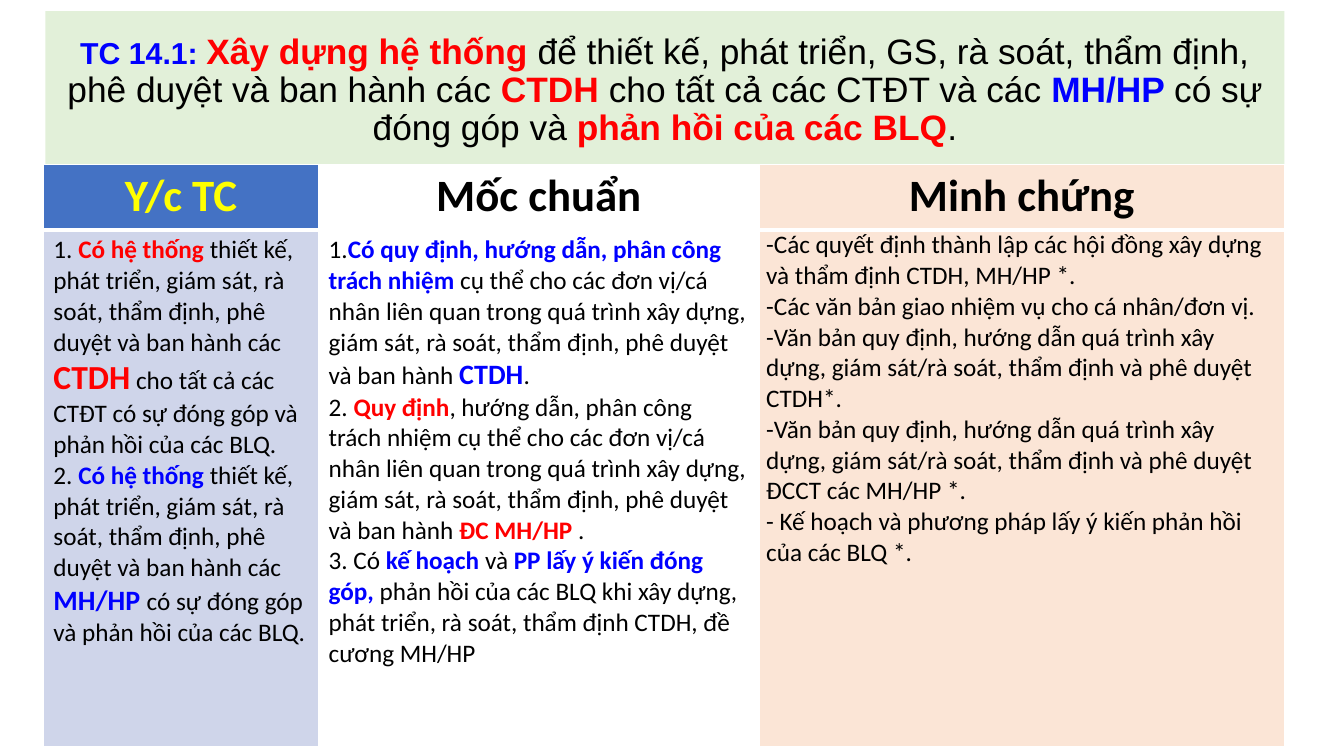
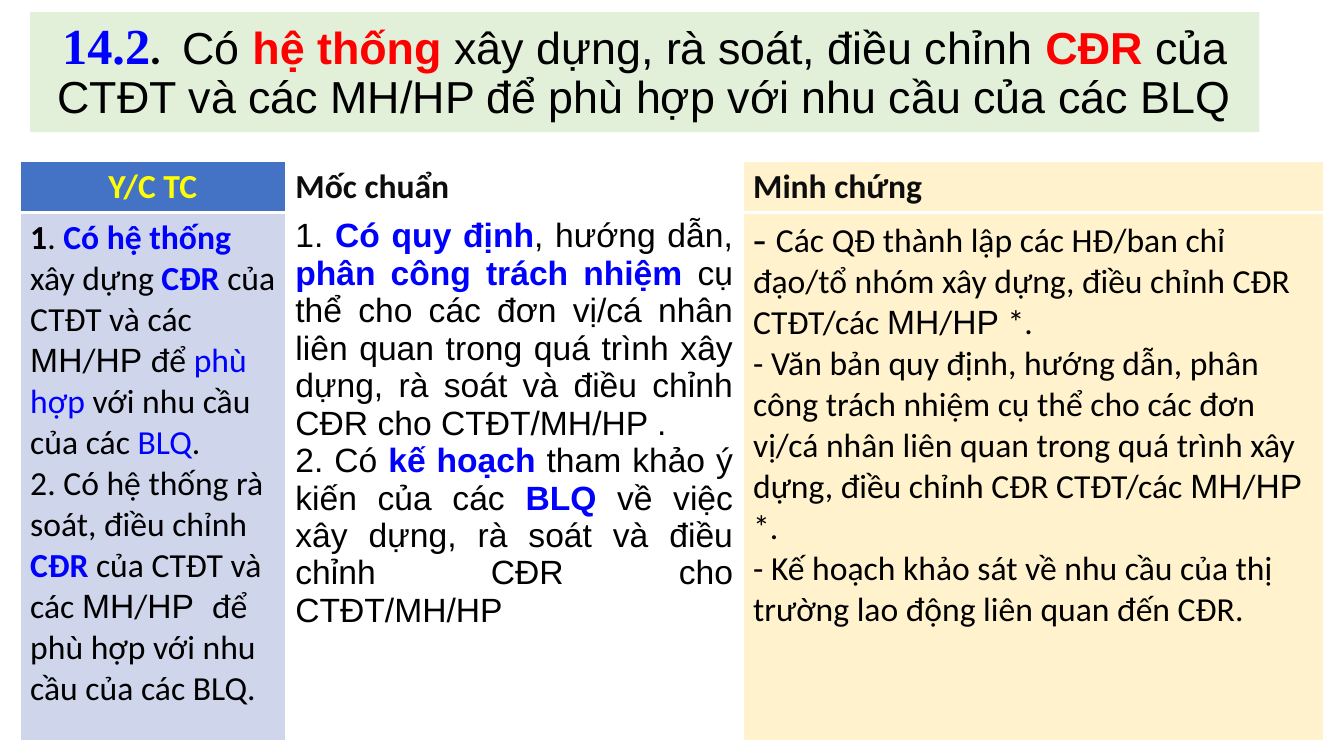
from lxml import etree
from pptx import Presentation
from pptx.dml.color import RGBColor
from pptx.enum.shapes import MSO_SHAPE
from pptx.enum.text import MSO_ANCHOR, PP_ALIGN
from pptx.oxml.ns import qn
from pptx.util import Inches, Pt

# Shared colours
BLACK, WHITE, SOFT_BLACK = "000000", "FFFFFF", "0D0D0D"
RED, BLUE, YELLOW = "FF0000", "0000FF", "FFFF00"
TITLE_GREEN, HEADER_BLUE, BODY_BLUE = "E2F0D9", "4472C4", "CFD5EA"
PEACH, CREAM = "FBE5D6", "FFF2CC"

# Shared text styles; a piece of text is a string or (string, style)
STRONG_RED = {"color": RED, "bold": True}
STRONG_BLUE = {"color": BLUE, "bold": True}
PLAIN_BLUE = {"color": BLUE}
ARIAL = {"font": "Arial"}


def red(text, **style):
    return text, STRONG_RED | style


def blue(text, **style):
    return text, STRONG_BLUE | style


def rgb(color):
    return RGBColor.from_string(color)


def add_pieces(paragraph, pieces, base):
    """Add one run per piece, each styled from base plus its own changes."""
    for piece in pieces:
        text, changes = (piece, {}) if isinstance(piece, str) else piece
        style = {"font": "Calibri", "color": BLACK} | base | changes
        run = paragraph.add_run()
        run.text = text
        run.font.name = style["font"]
        run.font.size = Pt(style["size"])
        run.font.bold = style.get("bold", False)
        run.font.italic = style.get("italic", False)
        run.font.color.rgb = rgb(style["color"])


def fill_text(text_frame, paragraphs, base, align=PP_ALIGN.LEFT):
    for index, pieces in enumerate(paragraphs):
        paragraph = text_frame.paragraphs[0] if index == 0 else text_frame.add_paragraph()
        paragraph.alignment = align
        add_pieces(paragraph, pieces, base)


def add_title(slide, left, top, width, height, pieces, size, bottom_inset=0.05):
    """Add the green title band."""
    shape = slide.shapes.add_shape(
        MSO_SHAPE.RECTANGLE, Inches(left), Inches(top), Inches(width), Inches(height))
    shape.shadow.inherit = False
    shape.fill.solid()
    shape.fill.fore_color.rgb = rgb(TITLE_GREEN)
    shape.line.fill.background()
    text_frame = shape.text_frame
    text_frame.word_wrap = True
    text_frame.vertical_anchor = MSO_ANCHOR.MIDDLE
    text_frame.margin_bottom = Inches(bottom_inset)
    fill_text(text_frame, [pieces], {"font": "Arial", "size": size}, PP_ALIGN.CENTER)
    text_frame.paragraphs[0].line_spacing = 0.9


def style_cell(cell, color, top, bottom):
    """Set the fill and the white borders of a cell."""
    properties = cell._tc.get_or_add_tcPr()
    for side, points in (("L", 1), ("R", 1), ("T", top), ("B", bottom)):
        line = etree.SubElement(properties, qn(f"a:ln{side}"), w=str(Pt(points)))
        solid = etree.SubElement(line, qn("a:solidFill"))
        etree.SubElement(solid, qn("a:srgbClr"), val=WHITE)
    cell.fill.solid()
    cell.fill.fore_color.rgb = rgb(color)


def add_criteria_table(slide, left, top, widths, heights, columns, header_size, body_size):
    """Add a header row and a body row; each column is a dict."""
    table = slide.shapes.add_table(
        2, len(columns), Inches(left), Inches(top),
        Inches(sum(widths)), Inches(sum(heights))).table
    for row, height in zip(table.rows, heights):
        row.height = Inches(height)
    for index, (column, width) in enumerate(zip(columns, widths)):
        table.columns[index].width = Inches(width)
        header, body = table.cell(0, index), table.cell(1, index)
        style_cell(header, column["header_fill"], 1, 3)
        style_cell(body, column["body_fill"], 3, 1)
        fill_text(header.text_frame, [[column["header"]]],
                  {"size": header_size, "bold": True, "color": column["header_color"]},
                  column["header_align"])
        fill_text(body.text_frame, column["body"],
                  {"size": body_size, "font": column.get("font", "Calibri")},
                  column.get("align", PP_ALIGN.LEFT))
        if "insets" in column:
            side, edge = column["insets"]
            body.margin_left = body.margin_right = Inches(side)
            body.margin_top = body.margin_bottom = Inches(edge)


def make_columns(headers, bodies, evidence_fill, header_color, header_align):
    """Build the requirement, benchmark and evidence columns."""
    fills = [(HEADER_BLUE, BODY_BLUE), (WHITE, WHITE), (evidence_fill, evidence_fill)]
    columns = [
        {"header": header, "body": body, "header_fill": header_fill, "body_fill": body_fill,
         "header_color": header_color, "header_align": header_align}
        for header, body, (header_fill, body_fill) in zip(headers, bodies, fills)]
    columns[0].update(header_color=YELLOW, header_align=PP_ALIGN.CENTER)
    return columns


def add_system_slide(slide):
    add_title(slide, 0.45, 0.11, 12.29, 1.68, [
        blue("TC 14.1: ", size=21.6), red("Xây dựng hệ thống "),
        "để thiết kế, phát triển, GS, rà soát, thẩm định, phê duyệt và ban hành các ",
        red("CTDH "), "cho tất cả các CTĐT và các ", blue("MH/HP "),
        "có sự đóng góp và ", red("phản hồi của các BLQ"), "."], 25.2, 0.15)

    design = "thiết kế, phát triển, giám sát, rà soát, thẩm định, phê duyệt và ban hành các "
    units = ("cụ thể cho các đơn vị/cá nhân liên quan trong quá trình xây dựng, "
             "giám sát, rà soát, thẩm định, phê duyệt và ban hành ")
    guidance = ("-Văn bản quy định, hướng dẫn quá trình xây dựng, "
                "giám sát/rà soát, thẩm định và phê duyệt ")
    requirements = [
        ["1. ", red("Có hệ thống "), design, red("CTDH", size=24),
         " cho tất cả các CTĐT có sự đóng góp và phản hồi của các BLQ."],
        ["2. ", blue("Có hệ thống "), design, blue("MH/HP ", size=20),
         "có sự đóng góp và phản hồi của các BLQ."]]
    benchmarks = [
        ["1.", blue("Có quy định, hướng dẫn, phân công trách nhiệm "), units,
         blue("CTDH", size=20), "."],
        ["2. ", red("Quy định"), ", hướng dẫn, phân công trách nhiệm " + units,
         red("ĐC MH/HP "), "."],
        ["3. Có ", blue("kế hoạch "), "và ", blue("PP lấy ý kiến đóng góp,"),
         " phản hồi của các BLQ khi xây dựng, phát triển, rà soát, thẩm định CTDH, "
         "đề cương MH/HP"]]
    evidence = [
        ["-Các quyết định thành lập các hội đồng xây dựng và thẩm định CTDH, MH/HP *."],
        ["-Các văn bản giao nhiệm vụ cho cá nhân/đơn vị."],
        [guidance + "CTDH*."],
        [guidance + "ĐCCT các MH/HP *."],
        ["- Kế hoạch và phương pháp lấy ý kiến phản hồi của các BLQ *."]]
    columns = make_columns(["Y/c TC", "Mốc chuẩn", "Minh chứng"],
                           [requirements, benchmarks, evidence],
                           PEACH, BLACK, PP_ALIGN.CENTER)
    columns[2]["insets"] = (0.07, 0)
    add_criteria_table(slide, 0.43, 1.63, [2.73, 4.37, 5.21], [0.65, 5.13], columns, 32, 18)


def add_outcome_slide(slide):
    add_title(slide, 0.3, 0.12, 12.19, 1.19, [
        blue("14.2", size=36, font="Times New Roman"),
        (".  ", {"font": "Calibri", "bold": True, "italic": True}),
        "Có ", red("hệ thống "), "xây dựng, rà soát, điều chỉnh ", red("CĐR"),
        " của CTĐT và các MH/HP để phù hợp với nhu cầu của các BLQ"], 32)

    course = [("MH", ARIAL), "/", ("HP ", ARIAL)]
    review = "xây dựng, rà soát và điều chỉnh CĐR cho CTĐT/MH/HP"
    units = "cụ thể cho các đơn vị/cá nhân liên quan trong quá trình "
    requirements = [
        [("1", {"bold": True}), ". ", blue("Có hệ thống "), "xây dựng ", blue("CĐR "),
         "của CTĐT và các ", *course, "để ", ("phù hợp ", PLAIN_BLUE),
         "với nhu cầu của các ", ("BLQ", PLAIN_BLUE), "."],
        ["2. Có hệ thống rà soát, điều chỉnh ", blue("CĐR "), "của CTĐT và các ",
         *course, (" ", ARIAL), "để phù hợp với nhu cầu của các BLQ."]]
    benchmarks = [
        ["1. ", blue("Có quy định"), ", hướng dẫn, ", blue("phân công trách nhiệm "),
         units + review + " ."],
        ["2. Có ", blue("kế hoạch "), "tham khảo ý kiến của các ", blue("BLQ "),
         "về việc " + review]]
    evidence = [
        [("- ", {"font": "Times New Roman", "size": 28}),
         "Các QĐ thành lập các HĐ/ban chỉ đạo/tổ nhóm xây dựng, điều chỉnh CĐR CTĐT/các ",
         *course, "*."],
        ["- Văn bản quy định, hướng dẫn, phân công trách nhiệm " + units
         + "xây dựng, điều chỉnh CĐR CTĐT/các ", *course, "*."],
        ["- Kế hoạch khảo sát về nhu cầu của thị trường lao động liên quan đến CĐR."]]
    columns = make_columns(["Y/C TC", "Mốc chuẩn", "Minh chứng"],
                           [requirements, benchmarks, evidence],
                           CREAM, SOFT_BLACK, PP_ALIGN.LEFT)
    columns[1].update(font="Arial", align=PP_ALIGN.JUSTIFY)
    add_criteria_table(slide, 0.2, 1.6, [2.63, 4.54, 5.76], [0.48, 5.24], columns, 24, 24)


def main():
    presentation = Presentation()
    presentation.slide_width, presentation.slide_height = Inches(13.33), Inches(7.5)
    for build in (add_system_slide, add_outcome_slide):
        build(presentation.slides.add_slide(presentation.slide_layouts[6]))
    presentation.save("out.pptx")


if __name__ == "__main__":
    main()
